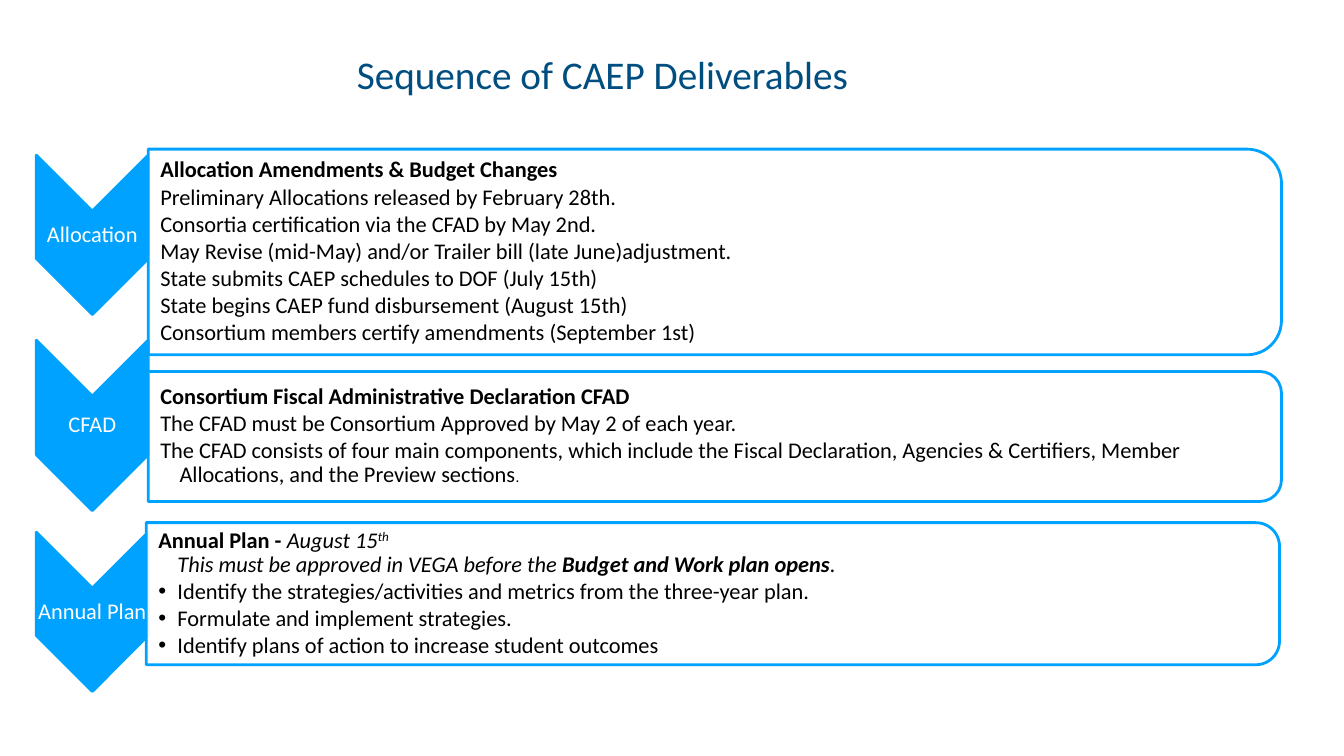
"""Build the slide showing the sequence of CAEP deliverables."""
from lxml import etree
from pptx import Presentation
from pptx.dml.color import RGBColor
from pptx.enum.shapes import MSO_SHAPE
from pptx.enum.text import MSO_ANCHOR, PP_ALIGN
from pptx.oxml.ns import qn
from pptx.util import Inches, Pt

CHEVRON = MSO_SHAPE.CHEVRON
ROUNDED_PANEL = MSO_SHAPE.ROUND_2_SAME_RECTANGLE
MIDDLE = MSO_ANCHOR.MIDDLE
LEFT, CENTER = PP_ALIGN.LEFT, PP_ALIGN.CENTER

NAVY = RGBColor(0x00, 0x4D, 0x80)
BLUE = RGBColor(0x00, 0xA2, 0xFF)
WHITE = RGBColor(0xFF, 0xFF, 0xFF)
BLACK = RGBColor(0x00, 0x00, 0x00)

CELL = Inches(0.1)
COLUMNS, ROWS = 133.3, 75
CHEVRON_LEFT, CHEVRON_WIDTH = 3.6, 11.1
PANEL_WIDTH = 112.4
TEXT_SHARE = 0.9

BOLD, ITALIC = {"bold": True}, {"italic": True}
BREAK = "\n"

STEPS = [
    {
        "label": "Allocation",
        "chevron": (23.3, 15.8),
        "panel": (14.7, 25, 20.4),
        "paragraphs": [
            [("Allocation Amendments & Budget Changes", BOLD)],
            [("Preliminary Allocations released by February 28th.", {})],
            [("Consortia certification via the CFAD by May 2nd.", {})],
            [("May Revise (mid-May) and/or Trailer bill (late June)adjustment.", {})],
            [("State submits CAEP schedules to DOF (July 15th)", {})],
            [("State begins CAEP fund disbursement (August 15th)", {})],
            [("Consortium members certify amendments (September 1st)", {})],
        ],
        "bullets": [],
    },
    {
        "label": "CFAD",
        "chevron": (42.2, 16.9),
        "panel": (14.7, 43.3, 12.9),
        "paragraphs": [
            [("Consortium Fiscal Administrative Declaration CFAD", BOLD)],
            [("The CFAD must be Consortium Approved by May 2 of each year.", {})],
            [("The CFAD consists of four main components, which include the Fiscal "
              "Declaration, Agencies & Certifiers, Member Allocations, and the "
              "Preview sections", {}),
             (".", {"size": Pt(11)})],
        ],
        "bullets": [],
    },
    {
        "label": "Annual Plan",
        "chevron": (60.7, 15.8),
        "panel": (14.5, 58.9, 14.1),
        "paragraphs": [
            [("Annual Plan - ", BOLD),
             ("August 15", ITALIC),
             ("th", ITALIC | {"baseline": "30000"}),
             (BREAK, {}),
             ("This must be approved in VEGA before the ", ITALIC),
             ("Budget and Work plan opens", BOLD | ITALIC),
             (".", ITALIC)],
        ],
        "bullets": [
            "Identify the strategies/activities and metrics from the three-year plan.",
            "Formulate and implement strategies.",
            "Identify plans of action to increase student outcomes",
        ],
    },
]


class DeliverablesSlide:
    """Hold the style and the current slide, with lengths in grid cells."""

    text_style = {"name": "Calibri", "size": Pt(16)}
    line_spacing = 0.9
    space_after = Pt(2.1)
    hanging_indent = Inches(0.19)

    def __init__(self, presentation):
        self.slide = presentation.slides.add_slide(presentation.slide_layouts[5])

    def cells(self, *lengths):
        return [round(length * CELL) for length in lengths]

    def add_run(self, paragraph, text, color, formats):
        if text == BREAK:
            paragraph.add_line_break()
            line_break = paragraph._p.findall(qn("a:br"))[-1]
            size = round(self.text_style["size"].pt * 100)
            etree.SubElement(line_break, qn("a:rPr")).set("sz", str(size))
            return
        run = paragraph.add_run()
        run.text = text
        run.font.color.rgb = color
        for name, value in (self.text_style | formats).items():
            if name == "baseline":
                run._r.get_or_add_rPr().set(name, value)
            else:
                setattr(run.font, name, value)

    def set_frame(self, frame, left_margin, margin):
        values = {"word_wrap": True, "vertical_anchor": MIDDLE,
                  "margin_left": Inches(left_margin), "margin_right": Inches(margin),
                  "margin_top": Inches(margin), "margin_bottom": Inches(margin)}
        for name, value in values.items():
            setattr(frame, name, value)

    def title(self, text, left, top, width, height):
        title = self.slide.shapes.title
        title.left, title.top, title.width, title.height = self.cells(
            left, top, width, height)
        self.set_frame(title.text_frame, 0.06, 0.06)
        paragraph = title.text_frame.paragraphs[0]
        paragraph.alignment = LEFT
        self.add_run(paragraph, text, NAVY, {"size": Pt(28)})

    def turned_shape(self, kind, left, middle, width, height, fill):
        center = left + width / 2
        shape = self.slide.shapes.add_shape(kind, *self.cells(
            center - height / 2, middle - width / 2, height, width))
        shape.rotation = 90
        shape.shadow.inherit = False
        shape.fill.solid()
        shape.fill.fore_color.rgb = fill
        shape.line.color.rgb = BLUE
        shape.line.width = Pt(2)
        return shape

    def text_box(self, left, middle, width, height, left_margin):
        box = self.slide.shapes.add_textbox(*self.cells(
            left, middle - height / 2, width, height))
        self.set_frame(box.text_frame, left_margin, 0.01)
        return box.text_frame

    def chevron(self, label, middle, height):
        self.turned_shape(CHEVRON, CHEVRON_LEFT, middle, CHEVRON_WIDTH, height, BLUE)
        frame = self.text_box(CHEVRON_LEFT, middle, CHEVRON_WIDTH, height / 3, 0.01)
        paragraph = frame.paragraphs[0]
        paragraph.alignment = CENTER
        paragraph.line_spacing = self.line_spacing
        self.add_run(paragraph, label, WHITE, {})

    def panel(self, left, middle, height, paragraphs, bullets):
        shape = self.turned_shape(
            ROUNDED_PANEL, left, middle, PANEL_WIDTH, height, WHITE)
        color = shape._element.spPr.find(qn("a:solidFill"))[0]
        etree.SubElement(color, qn("a:alpha")).set("val", "90000")
        frame = self.text_box(left, middle, PANEL_WIDTH - 0.6, height * TEXT_SHARE, 0.12)
        items = [(runs, False) for runs in paragraphs]
        items += [([(text, {})], True) for text in bullets]
        for index, (runs, bulleted) in enumerate(items):
            paragraph = frame.add_paragraph() if index else frame.paragraphs[0]
            paragraph.line_spacing = self.line_spacing
            paragraph.space_after = self.space_after
            properties = paragraph._p.get_or_add_pPr()
            properties.set("marL", str(self.hanging_indent))
            properties.set("indent", str(-self.hanging_indent))
            if bulleted:
                etree.SubElement(properties, qn("a:buFont")).set("typeface", "Arial")
                etree.SubElement(properties, qn("a:buChar")).set("char", "•")
            for text, formats in runs:
                self.add_run(paragraph, text, BLACK, formats)


def main():
    presentation = Presentation()
    presentation.slide_width = round(COLUMNS * CELL)
    presentation.slide_height = ROWS * CELL
    deliverables = DeliverablesSlide(presentation)
    deliverables.title("Sequence of CAEP Deliverables", 34.8, 4.4, 86.2, 5.8)
    for step in STEPS:
        deliverables.chevron(step["label"], *step["chevron"])
        deliverables.panel(*step["panel"], step["paragraphs"], step["bullets"])
    presentation.save("out.pptx")


if __name__ == "__main__":
    main()
